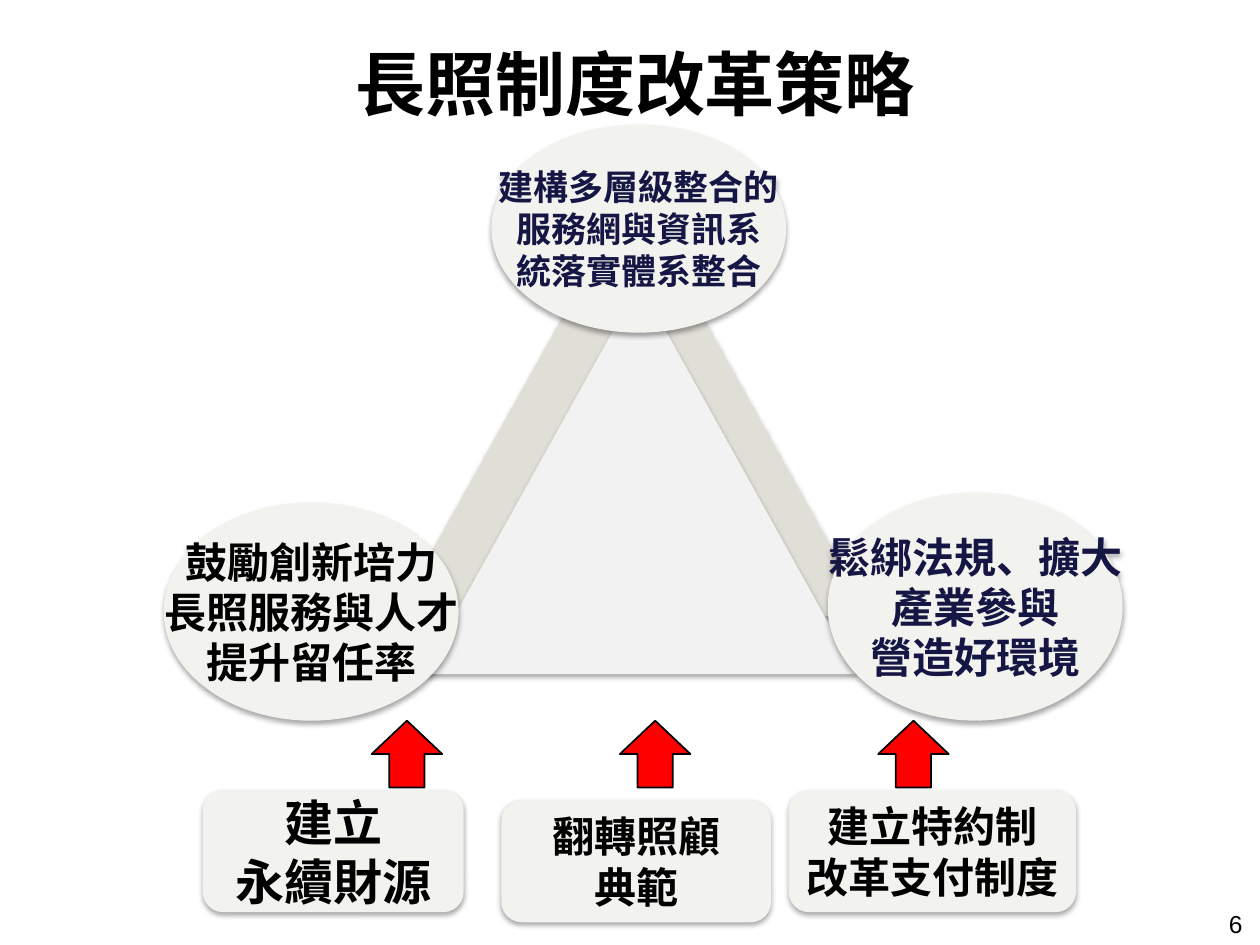
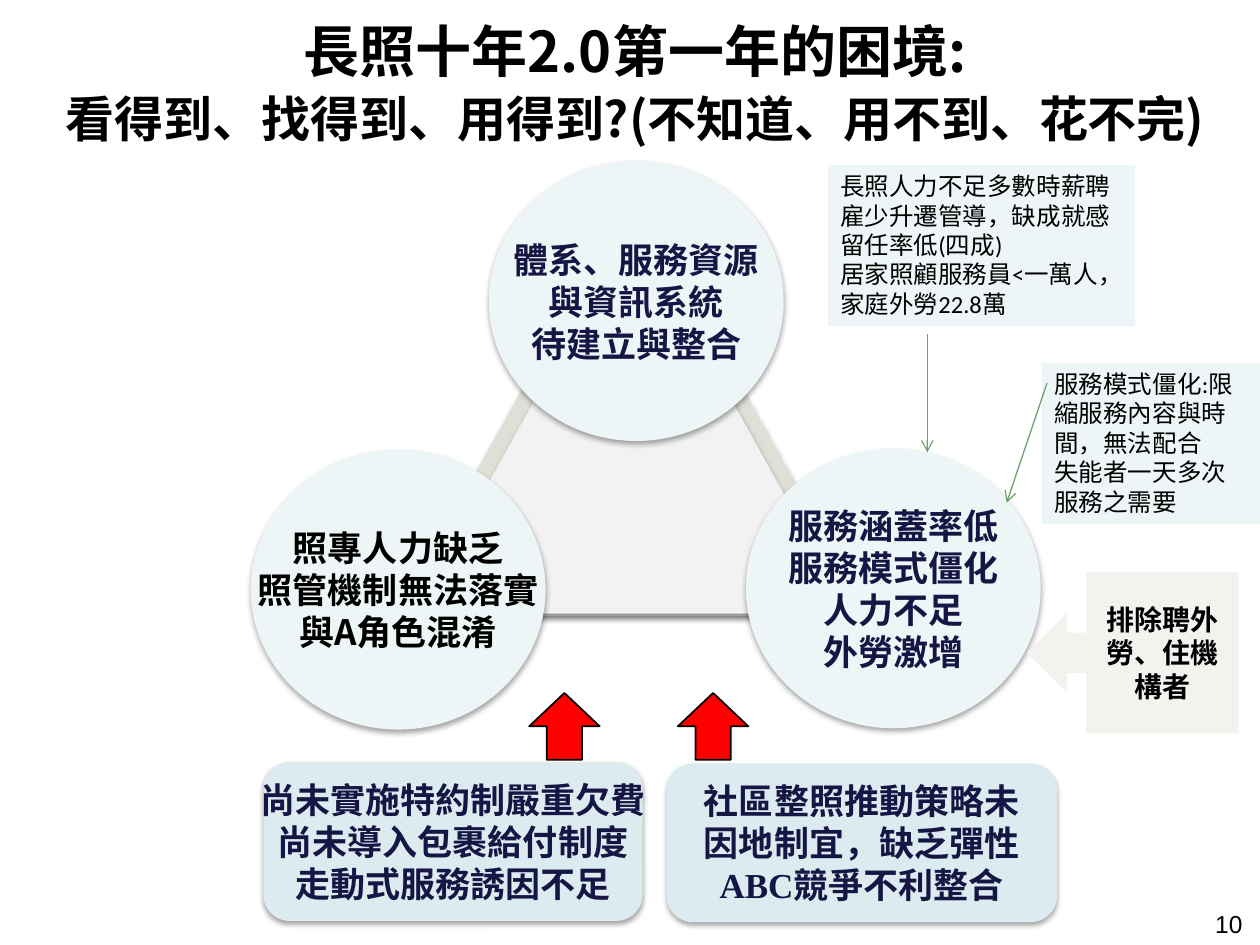
from collections import namedtuple
from lxml.etree import SubElement
from pptx import Presentation
from pptx.dml.color import RGBColor
from pptx.enum.shapes import MSO_CONNECTOR, MSO_SHAPE
from pptx.enum.text import MSO_ANCHOR, MSO_AUTO_SIZE, PP_ALIGN
from pptx.oxml.ns import qn
from pptx.util import Inches, Pt

BLACK = RGBColor(0x00, 0x00, 0x00)
NAVY = RGBColor(0x16, 0x16, 0x45)
RED = RGBColor(0xFF, 0x00, 0x00)
GREEN = RGBColor(0x6E, 0xA1, 0x72)
STONE = RGBColor(0xE0, 0xDF, 0xD7)
PALE = RGBColor(0xF2, 0xF2, 0xF2)
CREAM = RGBColor(0xF2, 0xF2, 0xEF)
MIST = RGBColor(0xEE, 0xF5, 0xF7)
SKY = RGBColor(0xDC, 0xEB, 0xEF)

SANS = "Noto Sans CJK SC"
SERIF = "Times New Roman"
PLAIN = "Calibri"
WIDE, HIGH = Inches(10), Inches(7.5)
COLS, ROWS = 100, 75

Style = namedtuple("Style", "size font color bold", defaults=(BLACK, True))
Orb = namedtuple("Orb", "x y high style text")
Card = namedtuple("Card", "x y wide style text")


class Box(namedtuple("Box", "x y w h")):
    def inner(self, x, y, w, h):
        return Box(self.x + x, self.y + y, w, h)

    def emu(self):
        return (int(self.x * WIDE / COLS), int(self.y * HIGH / ROWS),
                int(self.w * WIDE / COLS), int(self.h * HIGH / ROWS))


HEAD = Box(0.4, 1.3, 100, 9.9)
FOOT = Box(76.3, 71.3, 23.3, 4)
PEAK = Box(31.4, 15.2, 37.6, 33.7)
ORB_WIDE = 23.4
ARROW = (5.6, 5.3)


def shade(effects):
    cast = SubElement(effects, qn("a:outerShdw"), blurRad="40000",
                      dist="23000", dir="5400000", rotWithShape="0")
    tone = SubElement(cast, qn("a:srgbClr"), val="000000")
    SubElement(tone, qn("a:alpha"), val="35000")


def write(frame, text, styles, align=PP_ALIGN.CENTER, wrap=True,
          anchor=MSO_ANCHOR.MIDDLE, pitch=1.2):
    frame.text = text
    frame.word_wrap = wrap
    frame.auto_size = MSO_AUTO_SIZE.NONE
    frame.vertical_anchor = anchor
    for i, para in enumerate(frame.paragraphs):
        style = styles[min(i, len(styles) - 1)]
        para.alignment = align
        para.line_spacing = Pt(round(style.size * pitch, 1))
        para.space_before = Pt(0)
        for run in para.runs:
            font = run.font
            font.size = Pt(style.size)
            font.bold = style.bold
            font.color.rgb = style.color
            font.name = style.font
            SubElement(run._r.get_or_add_rPr(), qn("a:ea"), typeface=SANS)


def draw(slide, kind, box, fill, soft=False):
    shape = slide.shapes.add_shape(kind, *box.emu())
    shape.fill.solid()
    shape.fill.fore_color.rgb = fill
    shape.line.fill.background()
    shape.shadow.inherit = False
    if soft:
        shade(shape._element.spPr.find(qn("a:effectLst")))
    return shape


def head(slide, box, text, *sizes):
    title = slide.shapes.title
    title.left, title.top, title.width, title.height = box.emu()
    write(title.text_frame, text, [Style(size, SANS) for size in sizes],
          pitch=1.3)
    for para in title.text_frame.paragraphs:
        for run in para.runs:
            latin = run._r.get_or_add_rPr().find(qn("a:latin"))
            effects = latin.makeelement(qn("a:effectLst"))
            latin.addprevious(effects)
            shade(effects)


def foot(slide, box, text):
    label = slide.shapes.add_textbox(*box.emu())
    write(label.text_frame, text, [Style(14, "Arial", BLACK, False)],
          PP_ALIGN.RIGHT)


def peak(slide, box, x, y):
    draw(slide, MSO_SHAPE.ISOSCELES_TRIANGLE, box, STONE, True)
    front = box.inner(x, y, 34.5, 31)
    draw(slide, MSO_SHAPE.ISOSCELES_TRIANGLE, front, PALE, True)


def ring(slide, box, fill, orbs):
    for orb in orbs:
        shape = draw(slide, MSO_SHAPE.OVAL,
                     box.inner(orb.x, orb.y, ORB_WIDE, orb.high), fill, True)
        write(shape.text_frame, orb.text, orb.style, wrap=False)


def base(slide, box, fill, high, cards, lifts):
    for x in lifts:
        arrow = draw(slide, MSO_SHAPE.UP_ARROW, box.inner(x, 0, *ARROW), RED)
        arrow.line.color.rgb = BLACK
        arrow.line.width = Pt(1)
    for card in cards:
        shape = draw(slide, MSO_SHAPE.ROUNDED_RECTANGLE,
                     box.inner(card.x, card.y, card.wide, high), fill, True)
        write(shape.text_frame, card.text, card.style, wrap=False)


def note(slide, box, text):
    shape = draw(slide, MSO_SHAPE.RECTANGLE, box, MIST)
    write(shape.text_frame, text, [Style(14, PLAIN, BLACK, False)],
          PP_ALIGN.LEFT, anchor=MSO_ANCHOR.TOP)


def point(slide, box):
    x, y, w, h = box.emu()
    line = slide.shapes.add_connector(MSO_CONNECTOR.STRAIGHT,
                                      x, y, x + w, y + h)
    line.line.color.rgb = GREEN
    line.line.width = Pt(0.75)
    props = line._element.spPr
    SubElement(props.find(qn("a:ln")), qn("a:tailEnd"), type="arrow")
    SubElement(props, qn("a:effectLst"))


def side(slide, box):
    note(slide, box.inner(0, 0, 24.4, 12.8),
         "長照人力不足多數時薪聘雇少升遷管導，缺成就感留任率低(四成)\n"
         "居家照顧服務員<一萬人，家庭外勞22.8萬")
    note(slide, box.inner(17, 15.7, 17.3, 12.8),
         "服務模式僵化:限縮服務內容與時間，無法配合\n"
         "失能者一天多次服務之需要")
    point(slide, box.inner(7.9, 13.4, 0, 9.4))
    point(slide, box.inner(17.4, 17.3, -3.2, 9.5))
    call = draw(slide, MSO_SHAPE.LEFT_ARROW_CALLOUT,
                box.inner(15.8, 32.3, 16.8, 12.8), CREAM)
    for i, share in enumerate((0.25, 0.25, 0.25, 0.72)):
        call.adjustments[i] = share
    write(call.text_frame, "排除聘外勞、住機構者", [Style(16, PLAIN)])


def plan(slide):
    head(slide, HEAD, "長照制度改革策略", 40)
    foot(slide, FOOT, "6")
    peak(slide, PEAK, 2.1, 7.3)
    ring(slide, Box(13, 9.9, 76.1, 47.3), CREAM, [
        Orb(0, 30, 17.3, [Style(24, SANS)],
            "鼓勵創新培力\n長照服務與人才\n提升留任率"),
        Orb(52.7, 29.2, 18.1, [Style(24, SANS, NAVY)],
            "鬆綁法規、擴大\n產業參與\n營造好環境"),
        Orb(26, 0, 16.5, [Style(20, SANS, NAVY)],
            "建構多層級整合的\n服務網與資訊系\n統落實體系整合")])
    base(slide, Box(16.1, 57.2, 69.3, 16), CREAM, 9.7, [
        Card(0, 5.5, 20.7, [Style(28, SERIF)], "建立\n永續財源"),
        Card(23.7, 6.3, 21.4, [Style(24, SERIF)], "翻轉照顧\n典範"),
        Card(46.5, 5.5, 22.8, [Style(24, SERIF)], "建立特約制\n改革支付制度")],
        (13.4, 33.1, 53.6))


def woes(slide):
    head(slide, HEAD, "長照十年2.0第一年的困境:\n"
         "看得到、找得到、用得到?(不知道、用不到、花不完)", 32, 28)
    foot(slide, FOOT, "10")
    peak(slide, PEAK, 1.6, 2.5)
    navy = Style(20, SANS, NAVY)
    ring(slide, Box(19.9, 12.8, 62.7, 45.1), MIST, [
        Orb(0, 22.9, 22.2, [Style(20, SANS)],
            "照專人力缺乏\n照管機制無法落實\n與A角色混淆"),
        Orb(39.3, 22.8, 22.2, [navy],
            "服務涵蓋率低\n服務模式僵化\n人力不足\n外勞激增"),
        Orb(18.9, 0, 22.2, [navy],
            "體系、服務資源\n與資訊系統\n待建立與整合")])
    serif = [Style(20, SERIF, NAVY)]
    base(slide, Box(20.9, 55, 63, 18.2), SKY, 12.6, [
        Card(0, 5.5, 30.1, serif,
             "尚未實施特約制嚴重欠費\n尚未導入包裹給付制度\n走動式服務誘因不足"),
        Card(32, 5.6, 31, serif,
             "社區整照推動策略未\n因地制宜，缺乏彈性\nABC競爭不利整合")],
        (21.1, 32.9))
    side(slide, Box(65.7, 13.1, 34.3, 45.1))


def main():
    deck = Presentation()
    deck.slide_width, deck.slide_height = WIDE, HIGH
    for build in (plan, woes):
        build(deck.slides.add_slide(deck.slide_layouts[5]))
    deck.save("out.pptx")


if __name__ == "__main__":
    main()
